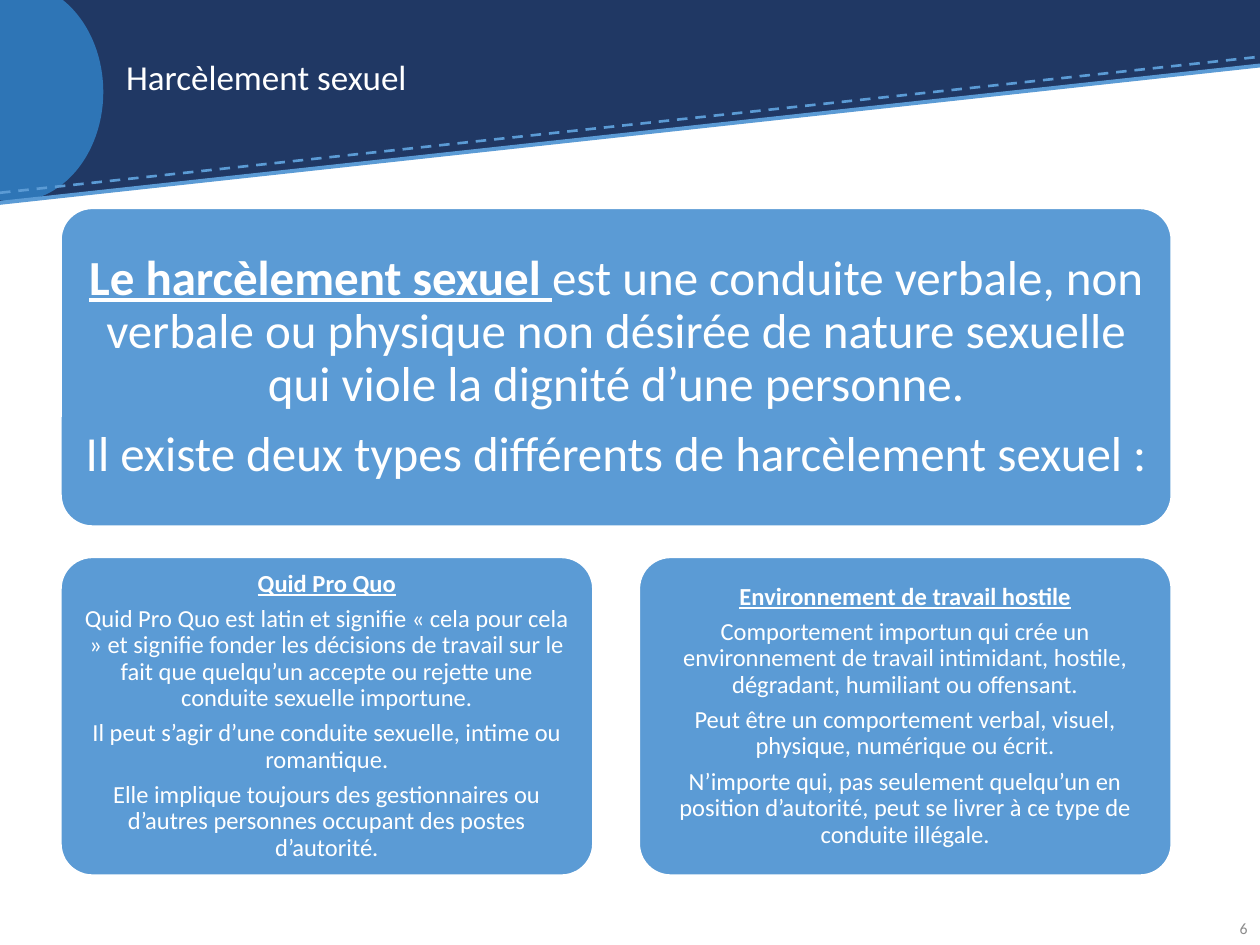
"""Build the slide on the two types of sexual harassment."""
from lxml.etree import SubElement
from pptx import Presentation
from pptx.dml.color import RGBColor
from pptx.enum.dml import MSO_LINE
from pptx.enum.shapes import MSO_CONNECTOR, MSO_SHAPE as Kind
from pptx.enum.text import MSO_ANCHOR as Anchor, PP_ALIGN as Align
from pptx.oxml.ns import qn
from pptx.util import Inches, Pt

NAVY = RGBColor(0x20, 0x38, 0x64)
BLUE = RGBColor(0x2E, 0x75, 0xB6)
SKY = RGBColor(0x5B, 0x9B, 0xD5)
GREY = RGBColor(0x8C, 0x8C, 0x8C)
WHITE = RGBColor(0xFF, 0xFF, 0xFF)

TITLE = "Harcèlement sexuel"
NUMBER = "6"
INTRO = [
    ("Le harcèlement sexuel ", "est une conduite verbale, non verbale ou physique "
     "non désirée de nature sexuelle qui viole la dignité d’une personne."),
    ("", "Il existe deux types différents de harcèlement sexuel :"),
]
TYPES = [
    [
        ("Quid Pro Quo", ""),
        ("", "Quid Pro Quo est latin et signifie « cela pour cela » et signifie "
         "fonder les décisions de travail sur le fait que quelqu’un accepte ou "
         "rejette une conduite sexuelle importune."),
        ("", "Il peut s’agir d’une conduite sexuelle, intime ou romantique."),
        ("", "Elle implique toujours des gestionnaires ou d’autres personnes "
         "occupant des postes d’autorité."),
    ],
    [
        ("Environnement de travail hostile", ""),
        ("", "Comportement importun qui crée un environnement de travail "
         "intimidant, hostile, dégradant, humiliant ou offensant."),
        ("", "Peut être un comportement verbal, visuel, physique, numérique ou écrit."),
        ("", "N’importe qui, pas seulement quelqu’un en position d’autorité, peut "
         "se livrer à ce type de conduite illégale."),
    ],
]
BANDS = [
    (Kind.RECTANGLE, (0, 0, 10, 0.52), NAVY),
    (Kind.RIGHT_TRIANGLE, (0, 0.51, 10, 1.09), NAVY),
    (Kind.OVAL, (-0.59, -0.14, 1.41, 1.74), BLUE),
]
RULES = [(1.53, 0.45, 1.5, MSO_LINE.DASH), (1.61, 0.52, 2.25, MSO_LINE.SOLID)]

LEFT, WIDTH, HEIGHT, GAP = 0.48, 8.82, 2.53, 0.36
TOPS = (1.65, 4.42)


def place(box):
    return [Inches(n) for n in box]


def style(para, size, color, align):
    para.alignment = align
    font = para.font
    font.name, font.size, font.color.rgb = "Calibri", Pt(size), color


def add_shape(slide, kind, box, fill):
    shape = slide.shapes.add_shape(kind, *place(box))
    shape.shadow.inherit = False
    shape.fill.solid()
    shape.fill.fore_color.rgb = fill
    shape.line.fill.background()
    return shape


def add_rule(slide, start, end, width, dash):
    rule = slide.shapes.add_connector(
        MSO_CONNECTOR.STRAIGHT, *place((0, start, 10, end)))
    rule.line.color.rgb = SKY
    rule.line.width = Pt(width)
    rule.line.dash_style = dash
    SubElement(rule._element.spPr, qn("a:effectLst"))


def add_card(slide, box, paras, size, inset):
    card = add_shape(slide, Kind.ROUNDED_RECTANGLE, box, SKY)
    card.adjustments[0] = 0.1
    card.line.color.rgb = WHITE
    card.line.width = Pt(1.5)
    frame = card.text_frame
    frame.word_wrap = True
    frame.vertical_anchor = Anchor.MIDDLE
    frame.margin_left = frame.margin_right = Inches(inset)
    frame.margin_top = frame.margin_bottom = Inches(inset)
    for i, (lead, body) in enumerate(paras):
        para = frame.paragraphs[0] if i == 0 else frame.add_paragraph()
        style(para, size, WHITE, Align.CENTER)
        para.line_spacing = 0.9
        para.space_after = Pt(size * 0.35)
        if lead:
            run = para.add_run()
            run.text = lead
            run.font.bold = run.font.underline = True
        if body:
            para.add_run().text = body


def add_title(slide):
    title = slide.shapes.title
    title.left, title.top, title.width, title.height = place((0.9, 0.2, 8.05, 0.86))
    title.text_frame.text = TITLE
    title.text_frame.vertical_anchor = Anchor.MIDDLE
    para = title.text_frame.paragraphs[0]
    style(para, 20, WHITE, Align.LEFT)
    para.line_spacing = 0.9
    slide.shapes._spTree.append(title._element)


def add_number(slide):
    frame = slide.shapes.add_textbox(*place((9.47, 7.17, 0.53, 0.4))).text_frame
    frame.word_wrap = True
    frame.vertical_anchor = Anchor.MIDDLE
    frame.text = NUMBER
    style(frame.paragraphs[0], 9, GREY, Align.RIGHT)


def main():
    deck = Presentation()
    deck.slide_width, deck.slide_height = Inches(10), Inches(7.5)
    slide = deck.slides.add_slide(deck.slide_layouts[5])
    for kind, box, fill in BANDS:
        band = add_shape(slide, kind, box, fill)
        if kind == Kind.RIGHT_TRIANGLE:
            band._element.spPr.xfrm.set("flipV", "1")
    for rule in RULES:
        add_rule(slide, *rule)
    add_title(slide)
    add_number(slide)
    add_card(slide, (LEFT, TOPS[0], WIDTH, HEIGHT), INTRO, 28, 0.12)
    half = (WIDTH - GAP) / 2
    for i, paras in enumerate(TYPES):
        left = LEFT + i * (half + GAP)
        add_card(slide, (left, TOPS[1], half, HEIGHT), paras, 14, 0.06)
    deck.save("out.pptx")


if __name__ == "__main__":
    main()
